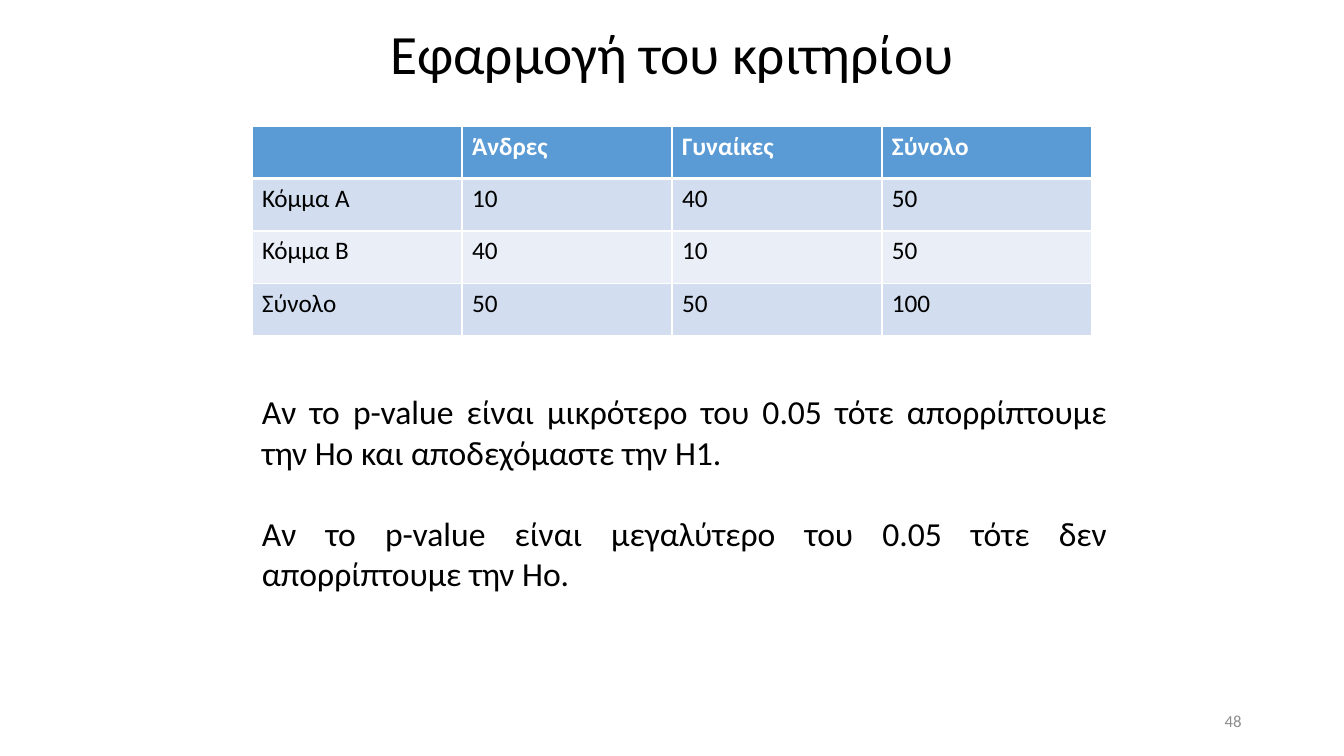
"""Build a slide on applying the criterion, with a party-by-gender table."""
from lxml.etree import SubElement
from pptx import Presentation
from pptx.dml.color import RGBColor
from pptx.enum.text import MSO_ANCHOR, PP_ALIGN
from pptx.oxml.ns import qn
from pptx.util import Pt

TITLE = "Εφαρμογή του κριτηρίου"
PAGE = "48"
RULES = [
    "Αν το p-value είναι μικρότερο του 0.05 τότε απορρίπτουμε την Ηο και αποδεχόμαστε την Η1.",
    "Αν το p-value είναι μεγαλύτερο του 0.05 τότε δεν απορρίπτουμε την Ηο.",
]
ROWS = [
    ("", "Άνδρες", "Γυναίκες", "Σύνολο"),
    ("Κόμμα Α", "10", "40", "50"),
    ("Κόμμα Β", "40", "10", "50"),
    ("Σύνολο", "50", "50", "100"),
]
HEADER, BANDS = "5B9BD5", ("EAEFF7", "D2DEEF")
BLACK, WHITE, GREY = "000000", "FFFFFF", "8C8C8C"
COL_W, ROW_H = 150, 37.5


def rgb(value):
    return RGBColor.from_string(value)


def style(font, size, color, bold=False):
    for name, value in {"name": "Calibri", "size": Pt(size), "bold": bold}.items():
        setattr(font, name, value)
    font.color.rgb = rgb(color)


def add_text(s, box, lines, size, color, anchor, **fmt):
    tf = s.shapes.add_textbox(*map(Pt, box)).text_frame
    tf.word_wrap, tf.vertical_anchor = True, anchor
    for i, line in enumerate(lines):
        p = tf.add_paragraph() if i else tf.paragraphs[0]
        for name, value in fmt.items():
            if i or name != "space_before":
                setattr(p, name, value)
        r = p.add_run()
        r.text = line
        style(r.font, size, color)


def add_border(cell, side, width):
    ln = SubElement(cell._tc.get_or_add_tcPr(), qn(f"a:ln{side}"), w=str(Pt(width)))
    SubElement(SubElement(ln, qn("a:solidFill")), qn("a:srgbClr"), val=WHITE)


def add_counts(s):
    n_rows, n_cols = len(ROWS), len(ROWS[0])
    box = (180, 90, n_cols * COL_W, n_rows * ROW_H)
    table = s.shapes.add_table(n_rows, n_cols, *map(Pt, box)).table
    for i, row in enumerate(ROWS):
        for j, text in enumerate(row):
            cell = table.cell(i, j)
            widths = {"L": 1, "R": 1, "T": 3 if i == 1 else 1, "B": 1 if i else 3}
            for side, width in widths.items():
                add_border(cell, side, width)
            cell.fill.solid()
            cell.fill.fore_color.rgb = rgb(BANDS[i % 2] if i else HEADER)
            cell.text = text
            style(cell.text_frame.paragraphs[0].font, 18, BLACK if i else WHITE, i == 0)


def main():
    prs = Presentation()
    prs.slide_width, prs.slide_height = Pt(960), Pt(540)
    s = prs.slides.add_slide(prs.slide_layouts[6])
    add_text(s, (156, 21.5, 648, 38), [TITLE], 39.6, BLACK, MSO_ANCHOR.MIDDLE,
             alignment=PP_ALIGN.CENTER, line_spacing=0.9)
    add_text(s, (678, 500.5, 216, 28.75), [PAGE], 12, GREY, MSO_ANCHOR.MIDDLE,
             alignment=PP_ALIGN.RIGHT)
    add_counts(s)
    add_text(s, (180, 276, 618, 152.5), RULES, 24, BLACK, MSO_ANCHOR.TOP,
             alignment=PP_ALIGN.JUSTIFY, space_before=Pt(29))
    prs.save("out.pptx")


if __name__ == "__main__":
    main()
